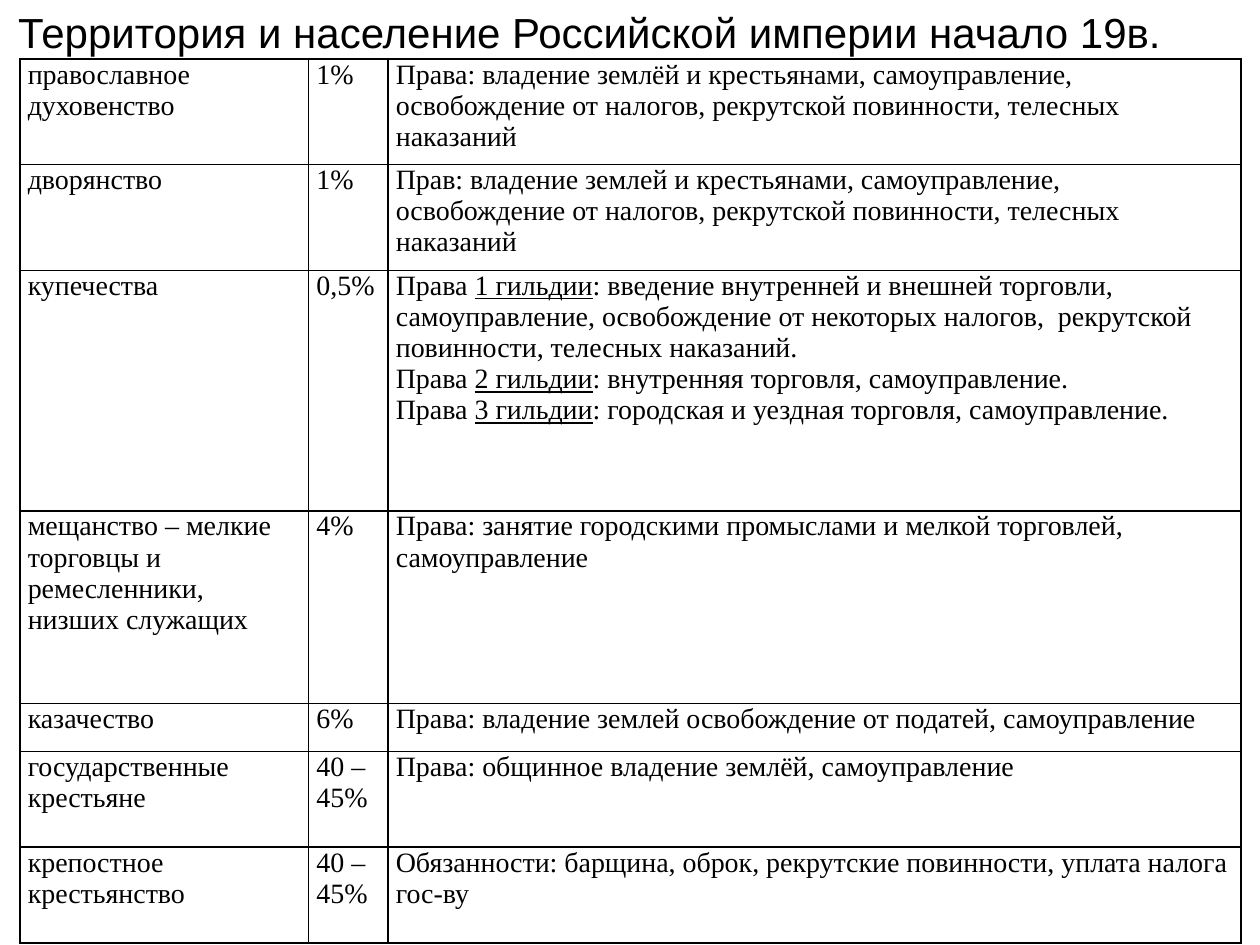
from lxml.etree import SubElement
from pptx import Presentation
from pptx.dml.color import RGBColor
from pptx.enum.text import MSO_ANCHOR, PP_ALIGN
from pptx.oxml.ns import qn
from pptx.util import Cm, Pt

COLORS = {"text": "000000", "border": "000000", "page": "FFFFFF"}
TITLE = "Территория и население Российской империи начало 19в."
COLUMN_WIDTHS = [5.82, 1.6, 17.2]

# Row height, estate, share of population, rights; underlined words stand between "_"
ESTATES = [
    (2.13, "православное духовенство", "1%",
     "Права: владение землёй и крестьянами, самоуправление, освобождение "
     "от налогов, рекрутской повинности, телесных наказаний"),
    (2.13, "дворянство", "1%",
     "Прав: владение землей и крестьянами, самоуправление, освобождение "
     "от налогов, рекрутской повинности, телесных наказаний"),
    (4.85, "купечества", "0,5%",
     "Права _1 гильдии_: введение внутренней и внешней торговли, самоуправление, "
     "освобождение от некоторых налогов,  рекрутской повинности, телесных наказаний.\n"
     "Права _2 гильдии_: внутренняя торговля, самоуправление.\n"
     "Права _3 гильдии_: городская и уездная торговля, самоуправление."),
    (3.88, "мещанство – мелкие торговцы и ремесленники, низших служащих", "4%",
     "Права: занятие городскими промыслами и мелкой торговлей, самоуправление"),
    (0.97, "казачество", "6%",
     "Права: владение землей освобождение от податей, самоуправление"),
    (1.93, "государственные крестьяне", "40 – 45%",
     "Права: общинное владение землёй, самоуправление"),
    (1.93, "крепостное крестьянство", "40 – 45%",
     "Обязанности: барщина, оброк, рекрутские повинности, уплата налога гос-ву"),
]


def format_span(span, font_name, size):
    span.font.name = font_name
    span.font.size = Pt(size)
    span.font.color.rgb = RGBColor.from_string(COLORS["text"])


def add_title(page, left, top, width, height):
    title = page.shapes.title
    title.left, title.top, title.width, title.height = left, top, width, height
    frame = title.text_frame
    frame.text = TITLE
    frame.word_wrap = False
    frame.vertical_anchor = MSO_ANCHOR.MIDDLE
    para = frame.paragraphs[0]
    para.alignment = PP_ALIGN.CENTER
    format_span(para.runs[0], "Arial", 24)


def set_borders(cell):
    properties = cell._tc.get_or_add_tcPr()
    for side in ("lnL", "lnR", "lnT", "lnB"):
        line = SubElement(properties, qn(f"a:{side}"), w=str(Pt(1)))
        fill = SubElement(line, qn("a:solidFill"))
        SubElement(fill, qn("a:srgbClr"), val=COLORS["border"])


def fill_cell(cell, text):
    set_borders(cell)
    cell.fill.solid()
    cell.fill.fore_color.rgb = RGBColor.from_string(COLORS["page"])
    cell.margin_left = cell.margin_right = Cm(0.16)
    cell.margin_top = cell.margin_bottom = 0
    cell.vertical_anchor = MSO_ANCHOR.TOP
    for number, line in enumerate(text.split("\n")):
        frame = cell.text_frame
        para = frame.add_paragraph() if number else frame.paragraphs[0]
        for index, part in enumerate(line.split("_")):
            span = para.add_run()
            span.text = part
            format_span(span, "Times New Roman", 16)
            if index % 2:
                span.font.underline = True


def add_estates_table(page, left, top):
    width = Cm(sum(COLUMN_WIDTHS))
    height = Cm(sum(row[0] for row in ESTATES))
    table = page.shapes.add_table(
        len(ESTATES), len(COLUMN_WIDTHS), left, top, width, height).table
    table.first_row = table.horz_banding = False
    for column, column_width in zip(table.columns, COLUMN_WIDTHS):
        column.width = Cm(column_width)
    for row, (row_height, *texts) in zip(table.rows, ESTATES):
        row.height = Cm(row_height)
        for cell, text in zip(row.cells, texts):
            fill_cell(cell, text)


def main():
    deck = Presentation()
    deck.slide_width, deck.slide_height = Cm(25.4), Cm(19.05)
    page = deck.slides.add_slide(deck.slide_layouts[5])
    add_title(page, Cm(0), Cm(0), Cm(23.77), Cm(1.27))
    add_estates_table(page, Cm(0.4), Cm(1.19))
    deck.save("out.pptx")


if __name__ == "__main__":
    main()
